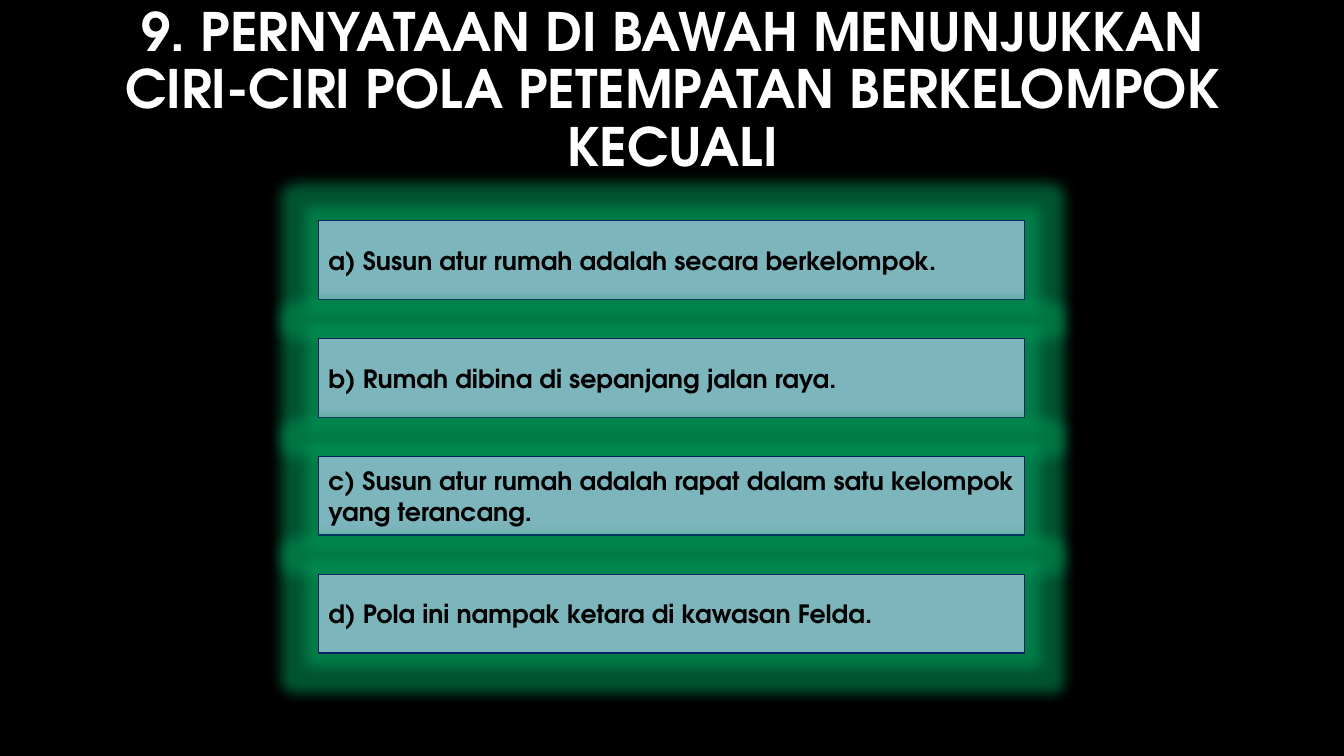
from lxml import etree
from pptx import Presentation
from pptx.dml.color import RGBColor
from pptx.enum.shapes import MSO_SHAPE
from pptx.enum.text import MSO_ANCHOR, PP_ALIGN
from pptx.oxml.ns import qn
from pptx.util import Inches, Pt

RECT = MSO_SHAPE.RECTANGLE
MIDDLE = MSO_ANCHOR.MIDDLE
LEFT, CENTER, JUSTIFY = PP_ALIGN.LEFT, PP_ALIGN.CENTER, PP_ALIGN.JUSTIFY

COLORS = {"background": "000000", "title": "FFFFFF", "option": "7DB5BD",
          "border": "002060", "text": "000000", "glow": "00A862", "shadow": "000000"}
FONT = "TeX Gyre Adventor"
TITLE = "9. PERNYATAAN DI BAWAH MENUNJUKKAN CIRI-CIRI POLA PETEMPATAN BERKELOMPOK KECUALI"
OPTIONS = [
    ("a) Susun atur rumah adalah secara berkelompok.", LEFT),
    ("b) Rumah dibina di sepanjang jalan raya.", LEFT),
    ("c) Susun atur rumah adalah rapat dalam satu kelompok yang terancang.", JUSTIFY),
    ("d) Pola ini nampak ketara di kawasan Felda.", LEFT),
]
EFFECTS = [
    ("a:glow", {"rad": Pt(18)}, "glow", 50),
    ("a:outerShdw", {"blurRad": Pt(4), "dist": Pt(3), "dir": 90 * 60000, "rotWithShape": 0},
     "shadow", 40),
]


def rgb(name):
    """Return the named colour."""
    return RGBColor.from_string(COLORS[name])


def write(sp, text, size, color, align, spacing=1.0):
    """Write one bold paragraph, centred vertically, into a shape."""
    tf = sp.text_frame
    for key, value in {"word_wrap": True, "vertical_anchor": MIDDLE}.items():
        setattr(tf, key, value)
    p = tf.paragraphs[0]
    for key, value in {"alignment": align, "line_spacing": spacing}.items():
        setattr(p, key, value)
    r = p.add_run()
    r.text = text
    for key, value in {"name": FONT, "size": Pt(size), "bold": True}.items():
        setattr(r.font, key, value)
    r.font.color.rgb = rgb(color)


def add_effects(sp):
    """Give a shape its glow and its soft shadow."""
    sp.shadow.inherit = False
    effects = sp.element.spPr.find(qn("a:effectLst"))
    for tag, attrs, color, alpha in EFFECTS:
        effect = etree.SubElement(effects, qn(tag), {k: str(int(v)) for k, v in attrs.items()})
        clr = etree.SubElement(effect, qn("a:srgbClr"), val=COLORS[color])
        etree.SubElement(clr, qn("a:alpha"), val=str(alpha * 1000))


def add_title(s, x, y, w, h):
    """Place the question in its box."""
    sp = s.shapes.add_textbox(Inches(x), Inches(y), Inches(w), Inches(h))
    write(sp, TITLE, 37.8, "title", CENTER, 0.9)


def add_options(s, x, y, w, h):
    """Stack the answer bars in a box, with gaps half a bar high."""
    bar = h / (1.5 * len(OPTIONS) - 0.5)
    for i, (text, align) in enumerate(OPTIONS):
        top = y + i * 1.5 * bar
        sp = s.shapes.add_shape(RECT, Inches(x), Inches(top), Inches(w), Inches(bar))
        sp.fill.solid()
        sp.fill.fore_color.rgb = rgb("option")
        sp.line.color.rgb = rgb("border")
        sp.line.width = Pt(1)
        add_effects(sp)
        write(sp, text, 18, "text", align)


def main():
    """Build and save the quiz slide."""
    prs = Presentation()
    prs.slide_width, prs.slide_height = Inches(13.33), Inches(7.5)
    s = prs.slides.add_slide(prs.slide_layouts[6])
    s.background.fill.solid()
    s.background.fill.fore_color.rgb = rgb("background")
    add_title(s, 0.92, 0, 11.5, 1.82)
    add_options(s, 3.16, 2.19, 7, 4.29)
    prs.save("out.pptx")


if __name__ == "__main__":
    main()
